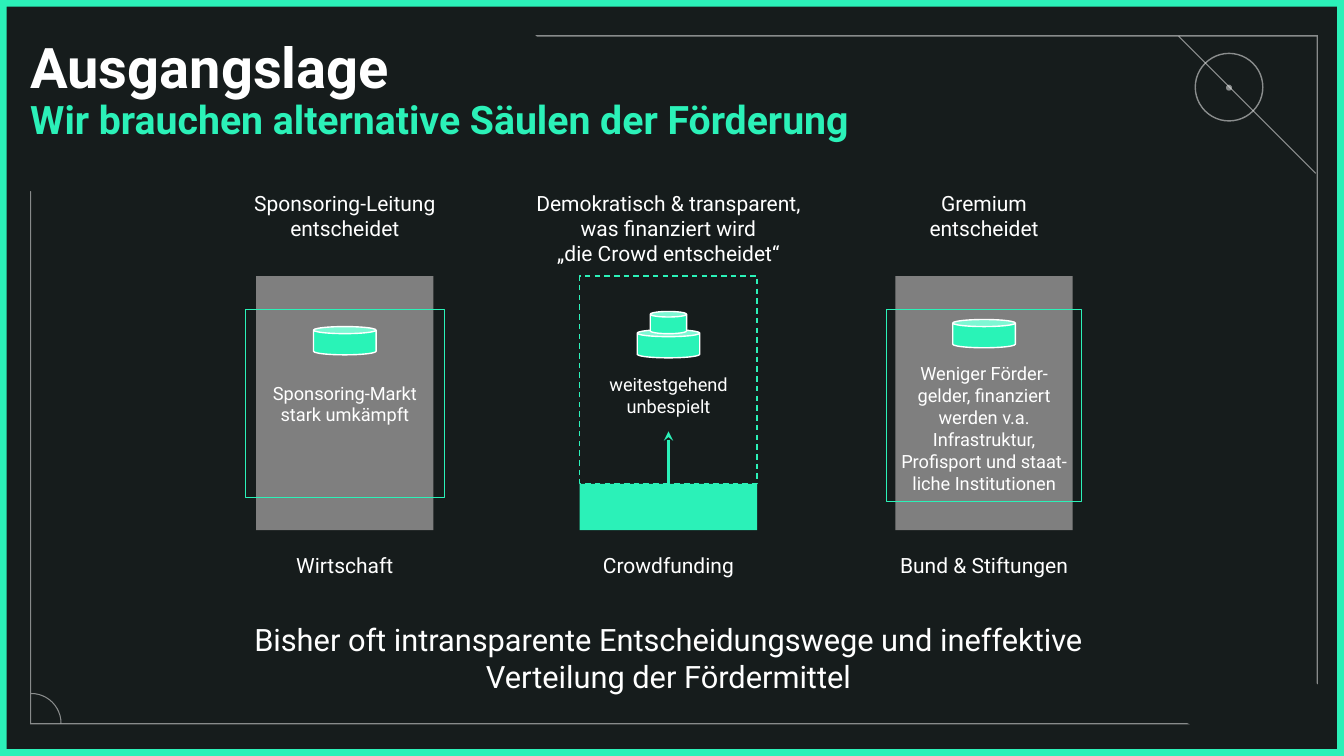
from lxml import etree
from pptx import Presentation
from pptx.dml.color import RGBColor
from pptx.enum.dml import MSO_LINE
from pptx.enum.shapes import MSO_CONNECTOR, MSO_SHAPE
from pptx.enum.text import MSO_ANCHOR, MSO_AUTO_SIZE, PP_ALIGN
from pptx.oxml.ns import qn
from pptx.util import Inches, Pt

DARK = RGBColor(0x16, 0x1C, 0x1C)
MINT = RGBColor(0x2B, 0xF1, 0xB8)
COIN = RGBColor(0x29, 0xF3, 0xB7)
GREY = RGBColor(0x7F, 0x7F, 0x7F)
WHITE = RGBColor(0xFF, 0xFF, 0xFF)
RECT, CAN, OVAL = MSO_SHAPE.RECTANGLE, MSO_SHAPE.CAN, MSO_SHAPE.OVAL
HALF, FRAME, ARC = MSO_SHAPE.HALF_FRAME, MSO_SHAPE.FRAME, MSO_SHAPE.ARC
LINE = MSO_CONNECTOR.STRAIGHT
TOP, MID, LOW = MSO_ANCHOR.TOP, MSO_ANCHOR.MIDDLE, MSO_ANCHOR.BOTTOM
LEFT, MIDST = PP_ALIGN.LEFT, PP_ALIGN.CENTER

WIDE, HIGH = 13.33, 7.5
COLS = (3.42, 6.63, 9.76)   # middle of each pillar
WIDTH = 1.76                # pillar width
HEAD, ROOF, FOOT, SUM = 1.85, 2.74, 5.44, 6.12   # tops of the rows
TALL, BASE = 2.52, 0.46     # full pillar, filled part of the middle one

deck = Presentation()
deck.slide_width, deck.slide_height = Inches(WIDE), Inches(HIGH)
slide = deck.slides.add_slide(deck.slide_layouts[5])
slide.background.fill.solid()
slide.background.fill.fore_color.rgb = DARK
shapes = slide.shapes


def place(kind, mid, top, width, height, fill=None, line=None, weight=1):
    """Add a shape centred on mid; without a kind it is a text box."""
    spot = [Inches(n) for n in (mid - width / 2, top, width, height)]
    if kind is None:
        return shapes.add_textbox(*spot)
    shape = shapes.add_shape(kind, *spot)
    shape.shadow.inherit = False
    if fill is None:
        shape.fill.background()
    else:
        shape.fill.solid()
        shape.fill.fore_color.rgb = fill
    if line is None:
        shape.line.fill.background()
    else:
        shape.line.color.rgb = line
        shape.line.width = Pt(weight)
    return shape


def write(box, lines, size, anchor=TOP, foot=0.04):
    frame = box.text_frame
    frame.word_wrap = True
    frame.vertical_anchor = anchor
    frame.margin_left = frame.margin_right = Inches(0.09)
    frame.margin_top, frame.margin_bottom = Inches(0.04), Inches(foot)
    for i, line in enumerate(lines):
        para = frame.paragraphs[0] if i == 0 else frame.add_paragraph()
        para.alignment = MIDST
        run = para.add_run()
        run.text = line
        run.font.name, run.font.size = "Roboto", Pt(size)
        run.font.color.rgb = WHITE


# Frame and faint ornaments
rim = place(FRAME, WIDE / 2, 0, WIDE, HIGH, MINT)
rim.adjustments[0] = 0.009

faint = []
for mid, top, width, height, turn in (
    (6.05, -1.21, 5.29, 11.5, 270),
    (9.19, -0.31, 6.44, 7.76, 90),
):
    half = place(HALF, mid, top, width, height, WHITE)
    half.adjustments[0] = half.adjustments[1] = 0.002
    half.rotation = turn
    faint.append(half)
faint.append(place(ARC, 0.31, 6.88, 0.59, 0.59, None, WHITE, 0.75))
faint.append(place(OVAL, 12.19, 0.53, 0.67, 0.67, None, WHITE))
faint.append(place(OVAL, 12.19, 0.84, 0.06, 0.06, WHITE))
slant = shapes.add_connector(
    LINE, Inches(11.69), Inches(0.36), Inches(13.05), Inches(1.72))
slant.line.color.rgb = WHITE
slant.line.width = Pt(0.75)
faint.append(slant)
for shape in faint:
    for tint in shape._element.spPr.iter(qn("a:srgbClr")):
        etree.SubElement(tint, qn("a:alpha")).set("val", "49000")

# Title
title = shapes.title
title.left, title.top = Inches(0.3), Inches(0.35)
title.width, title.height = Inches(8.92), Inches(1.12)
frame = title.text_frame
frame.auto_size = MSO_AUTO_SIZE.NONE
frame.word_wrap = True
frame.vertical_anchor = MID
frame.margin_left, frame.margin_right = 0, Inches(0.1)
frame.margin_top, frame.margin_bottom = Inches(0.04), Inches(0.05)
para = frame.paragraphs[0]
para.alignment = LEFT
para.line_spacing = 0.9
for text, size, tint in (
    ("Ausgangslage", 40, WHITE),
    ("Wir brauchen alternative Säulen der Förderung", 28, MINT),
):
    if para.runs:
        para.add_line_break()
    run = para.add_run()
    run.text = text
    run.font.name, run.font.size, run.font.bold = "Roboto", Pt(size), True
    run.font.color.rgb = tint

# Pillars
for mid in (COLS[0], COLS[2]):
    place(RECT, mid, ROOF, WIDTH, TALL, GREY)
gap = place(RECT, COLS[1], ROOF, WIDTH, TALL - BASE, None, MINT)
gap.line.dash_style = MSO_LINE.DASH
base = place(RECT, COLS[1], ROOF + TALL - BASE, WIDTH, BASE, MINT)

# Labels above and below the pillars
labels = (
    (["Sponsoring-Leitung", "entscheidet"], "Wirtschaft"),
    (["Demokratisch & transparent, was finanziert wird",
      "„die Crowd entscheidet“"], "Crowdfunding"),
    (["Gremium", "entscheidet"], "Bund & Stiftungen"),
)
for mid, (head, foot) in zip(COLS, labels):
    write(place(None, mid, HEAD, 3.02, 0.28 * len(head)), head, 15)
    write(place(None, mid, FOOT, 2.17, 0.34), [foot], 15)

# Notes on the pillars
write(place(RECT, COLS[0], 3.07, 1.97, 1.87, None, MINT, 0.75),
      ["Sponsoring-Markt stark umkämpft"], 13, MID)
write(place(None, COLS[1], 3.66, 1.92, 0.53),
      ["weitestgehend unbespielt"], 13)
write(place(RECT, COLS[2], 3.07, 1.94, 1.91, None, MINT, 0.75),
      ["Weniger Förder-gelder, finanziert werden v.a. Infrastruktur, "
       "Profisport und staat-liche Institutionen"], 13, LOW, 0.08)

# Coins
for mid, top, width, height in (
    (COLS[0], 3.24, 0.62, 0.28),
    (COLS[2], 3.17, 0.62, 0.28),
    (COLS[1], 3.27, 0.62, 0.28),
    (COLS[1], 3.09, 0.36, 0.22),
):
    place(CAN, mid, top, width, height, COIN, WHITE)

# Growth arrow
arrow = shapes.add_connector(
    LINE, Inches(COLS[1]), base.top, Inches(COLS[1]), Inches(4.28))
arrow.begin_connect(base, 0)
arrow.line.color.rgb = MINT
arrow.line.width = Pt(2.25)
etree.SubElement(arrow.line._get_or_add_ln(), qn("a:tailEnd")).set(
    "type", "stealth")
for line in (slant, arrow):
    etree.SubElement(line._element.spPr, qn("a:effectLst"))

# Summary
write(place(None, COLS[1], SUM, 8.75, 0.84),
      ["Bisher oft intransparente Entscheidungswege und ineffektive "
       "Verteilung der Fördermittel"], 22)

deck.save("out.pptx")
